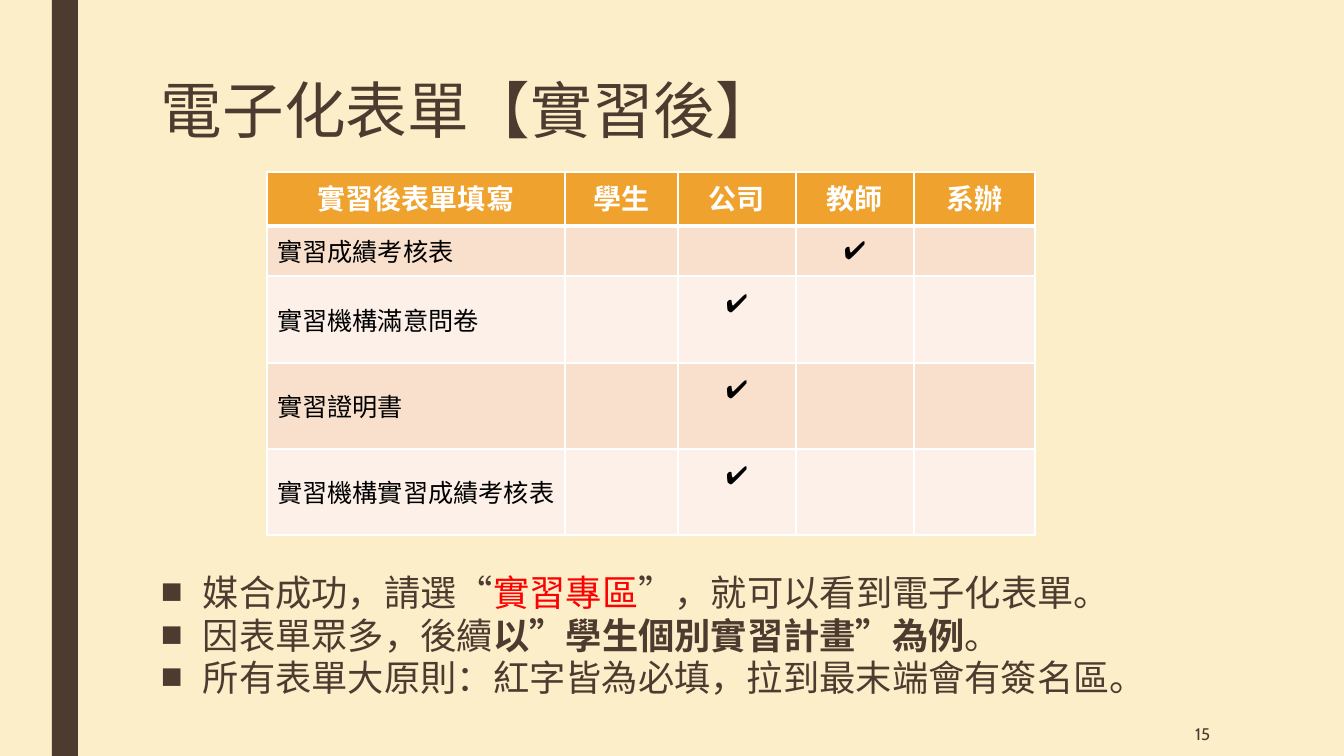
from dataclasses import dataclass

import pptx
import pptx.util
import pptx.dml.color
import pptx.enum.shapes
import pptx.enum.text
import pptx.oxml
import pptx.oxml.ns

EMU_PER_PX = 914400 / 100.8
ALIGN = pptx.enum.text.PP_ALIGN
ANCHOR = pptx.enum.text.MSO_ANCHOR


@dataclass(frozen=True)
class Theme:
    background: str = "FBEEC9"
    brown: str = "4E3B30"
    orange: str = "F0A22E"
    bands: tuple = ("F9E0CD", "FCF0E8")
    white: str = "FFFFFF"
    black: str = "000000"
    red: str = "FF0000"
    latin: str = "Cabin"
    cjk: str = "Noto Sans CJK TC"
    bullet_font: str = "Arial"
    title_size: float = 44
    body_size: float = 25.9
    header_size: float = 20
    cell_size: float = 18
    number_size: float = 12


def px(length):
    return pptx.util.Emu(round(length * EMU_PER_PX))


def rgb(value):
    return pptx.dml.color.RGBColor.from_string(value)


def add_xml(parent, xml):
    """Append a DrawingML element, given without its namespace."""
    head, mark, rest = xml.partition("/>" if xml.find(">") == xml.find("/>") + 1 else ">")
    xml = f"{head} {pptx.oxml.ns.nsdecls('a')}{mark}{rest}"
    parent.append(pptx.oxml.parse_xml(xml))


def write(paragraph, text, *, size, color, latin, cjk, bold=False,
          align=ALIGN.LEFT, spacing=None):
    """Add one formatted run to a paragraph."""
    paragraph.alignment = align
    if spacing:
        paragraph.line_spacing = spacing
    run = paragraph.add_run()
    run.text = text
    run.font.size = pptx.util.Pt(size)
    run.font.bold = bold
    run.font.name = latin
    run.font.color.rgb = rgb(color)
    add_xml(run.font._element, f'<a:ea typeface="{cjk}"/>')


class SlideBuilder:
    def __init__(self, slide, theme):
        self.slide = slide
        self.theme = theme
        fill = slide.background.fill
        fill.solid()
        fill.fore_color.rgb = rgb(theme.background)

    def bar(self, left, top, width, height):
        bar = self.slide.shapes.add_shape(
            pptx.enum.shapes.MSO_SHAPE.RECTANGLE, *map(px, (left, top, width, height)))
        bar.shadow.inherit = False
        bar.fill.solid()
        bar.fill.fore_color.rgb = rgb(self.theme.brown)
        bar.line.fill.background()

    def frame(self, left, top, width, height, anchor=ANCHOR.TOP):
        box = self.slide.shapes.add_textbox(*map(px, (left, top, width, height)))
        box.text_frame.word_wrap = True
        box.text_frame.vertical_anchor = anchor
        return box.text_frame

    def text(self, box, text, anchor=ANCHOR.TOP, **style):
        frame = self.frame(*box, anchor=anchor)
        write(frame.paragraphs[0], text, color=self.theme.brown,
              latin=self.theme.latin, cjk=self.theme.cjk, **style)

    def bullets(self, box, items):
        theme = self.theme
        frame = self.frame(*box)
        for index, runs in enumerate(items):
            paragraph = frame.paragraphs[0] if index == 0 else frame.add_paragraph()
            paragraph.space_before = pptx.util.Pt(6)
            paragraph.space_after = pptx.util.Pt(1.25)
            for text, style in runs:
                write(paragraph, text, size=theme.body_size, latin=theme.cjk,
                      cjk=theme.cjk, spacing=0.74, **{"color": theme.brown, **style})
            properties = paragraph._p.get_or_add_pPr()
            properties.set("marL", str(px(42)))
            properties.set("indent", str(-px(42)))
            add_xml(properties, f'<a:buFont typeface="{theme.bullet_font}"/>')
            add_xml(properties, '<a:buChar char="■"/>')

    def cell(self, cell, text, fill, bottom_line=1, anchor=ANCHOR.MIDDLE, **style):
        theme = self.theme
        cell.vertical_anchor = anchor
        paragraph = cell.text_frame.paragraphs[0]
        if text:
            write(paragraph, text, latin=theme.latin, cjk=theme.cjk, **style)
        else:
            paragraph.font.size = pptx.util.Pt(theme.cell_size)
        properties = cell._tc.get_or_add_tcPr()
        for side, width in {"L": 1, "R": 1, "T": 1, "B": bottom_line}.items():
            add_xml(properties,
                    f'<a:ln{side} w="{pptx.util.Pt(width)}"><a:solidFill>'
                    f'<a:srgbClr val="{theme.white}"/></a:solidFill></a:ln{side}>')
        cell.fill.solid()
        cell.fill.fore_color.rgb = rgb(fill)

    def checklist(self, left, top, widths, heights, headers, forms):
        theme = self.theme
        table = self.slide.shapes.add_table(
            len(heights), len(widths),
            *map(px, (left, top, sum(widths), sum(heights)))).table
        for column, width in zip(table.columns, widths):
            column.width = px(width)
        for row, height in zip(table.rows, heights):
            row.height = px(height)

        for col, header in enumerate(headers):
            self.cell(table.cell(0, col), header, theme.orange, bottom_line=3,
                      anchor=ANCHOR.TOP, size=theme.header_size, color=theme.white,
                      bold=True, align=ALIGN.CENTER)

        for row, (form, filled_by) in enumerate(forms, start=1):
            for col, header in enumerate(headers):
                mark = "✔" if header == filled_by else ""
                cell = table.cell(row, col)
                self.cell(cell, mark if col else form, theme.bands[(row - 1) % 2],
                          size=theme.cell_size, color=theme.black,
                          align=ALIGN.CENTER if col else ALIGN.LEFT)
                # Marks in the tall rows sit above the middle
                if mark and row > 1:
                    cell.margin_bottom = px(37)


def main():
    theme = Theme()
    deck = pptx.Presentation()
    deck.slide_width, deck.slide_height = px(1344), px(756)
    page = SlideBuilder(deck.slides.add_slide(deck.slide_layouts[6]), theme)

    # Side bar and title
    page.bar(52, 0, 26, 756)
    page.text((151, 76, 1058, 163), "電子化表單【實習後】", size=theme.title_size, spacing=0.89)

    # Who fills in which form
    page.checklist(
        267, 172, widths=[298, 113, 118, 118, 121], heights=[54, 50, 87, 86, 86],
        headers=["實習後表單填寫", "學生", "公司", "教師", "系辦"],
        forms=[("實習成績考核表", "教師"), ("實習機構滿意問卷", "公司"),
               ("實習證明書", "公司"), ("實習機構實習成績考核表", "公司")])

    # Notes
    page.bullets((151, 576, 1096, 152), [
        [("媒合成功，請選“", {}), ("實習專區", {"color": theme.red}),
         ("”，就可以看到電子化表單。", {})],
        [("因表單眾多，後續", {}), ("以”學生個別實習計畫”為例", {"bold": True}), ("。", {})],
        [("所有表單大原則：紅字皆為必填，拉到最末端會有簽名區。", {})],
    ])

    # Slide number
    page.text((1044, 712, 176, 44), "15", anchor=ANCHOR.MIDDLE,
              size=theme.number_size, align=ALIGN.RIGHT)

    deck.save("out.pptx")


if __name__ == "__main__":
    main()
